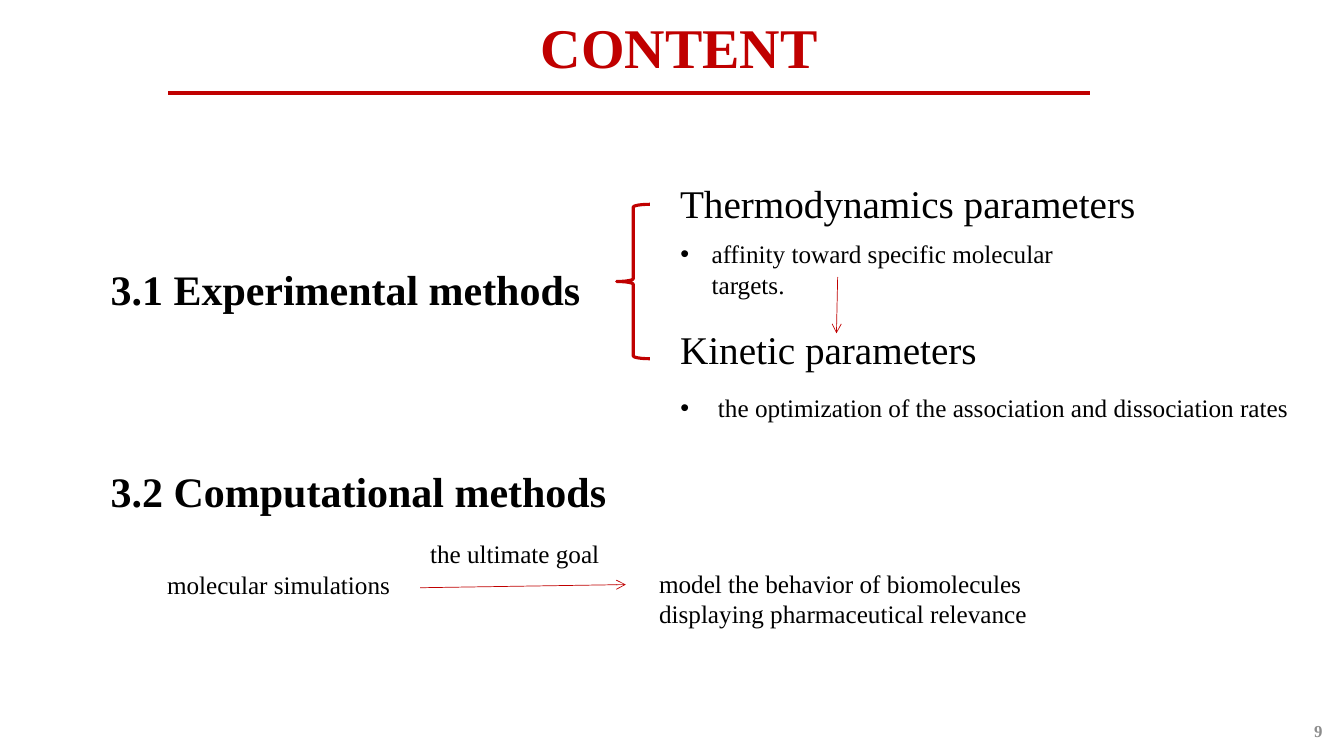
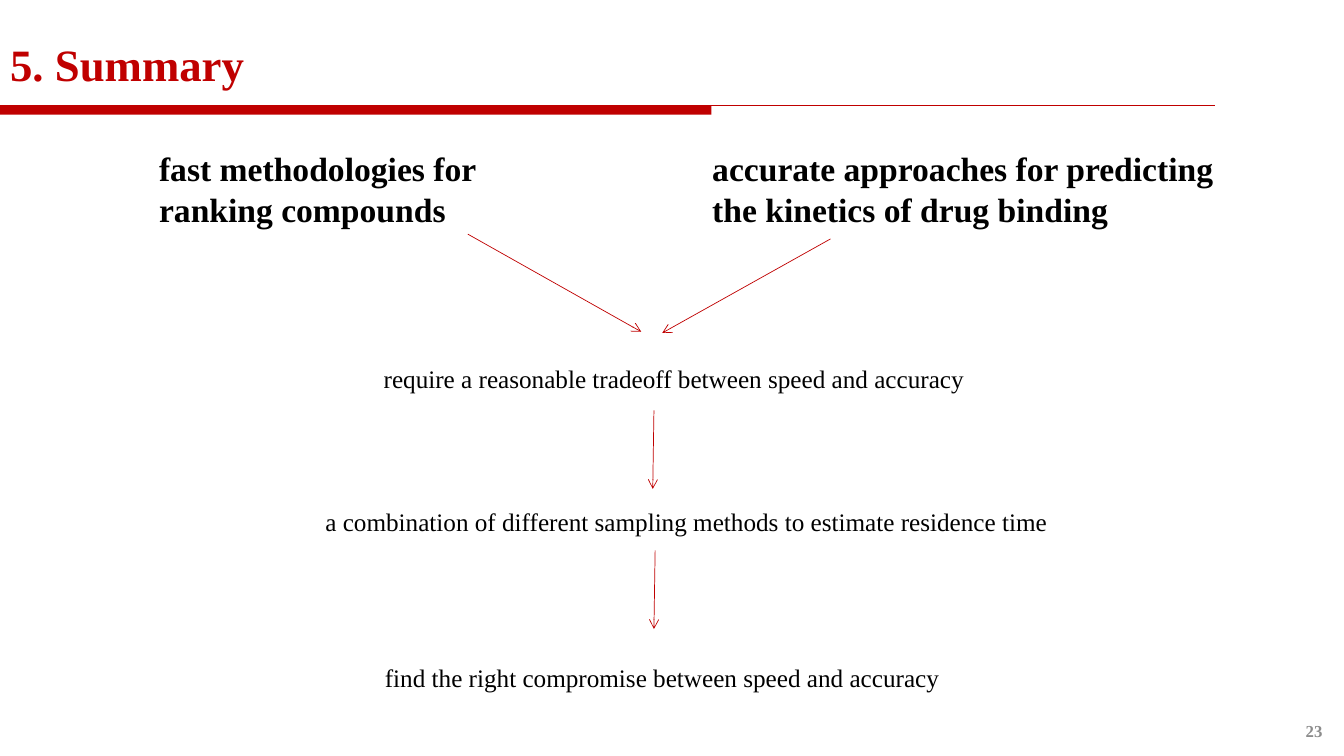
import lxml.etree
import pptx
import pptx.dml.color
import pptx.enum.shapes
import pptx.enum.text
import pptx.oxml.ns
import pptx.util

Cm = pptx.util.Cm
Pt = pptx.util.Pt
SHAPE = pptx.enum.shapes.MSO_SHAPE
ALIGN = pptx.enum.text.PP_ALIGN
ANCHOR = pptx.enum.text.MSO_ANCHOR

# Shared style
FONT = "Times New Roman"
RED, BLACK, GREY = "C00000", "000000", "8C8C8C"
BODY, HEADING = 18, 30
LINE_H = 1.02


def color(hex_code):
    return pptx.dml.color.RGBColor.from_string(hex_code)


def add_xml(parent, tag, **attrs):
    lxml.etree.SubElement(parent, pptx.oxml.ns.qn(tag), attrs)


def write(sp, lines, size, bold=False, hex_code=BLACK, align=ALIGN.LEFT,
          anchor=ANCHOR.TOP, hanging=None):
    """Fill a text box or placeholder, one paragraph for each line."""
    tf = sp.text_frame
    tf.word_wrap = True
    tf.auto_size = pptx.enum.text.MSO_AUTO_SIZE.NONE
    tf.vertical_anchor = anchor
    for i, line in enumerate(lines):
        p = tf.add_paragraph() if i else tf.paragraphs[0]
        if hanging:
            pPr = p._p.get_or_add_pPr()
            pPr.set("marL", str(int(Cm(hanging))))
            pPr.set("indent", str(-int(Cm(hanging))))
            add_xml(pPr, "a:buFont", typeface="Arial")
            add_xml(pPr, "a:buChar", char="•")
        p.alignment = align
        p.space_before = Pt(0)
        r = p.add_run()
        r.text = line
        r.font.name, r.font.size, r.font.bold = FONT, Pt(size), bold
        r.font.color.rgb = color(hex_code)


def add_text(s, x, y, w, h, lines, size=BODY, **style):
    sp = s.shapes.add_textbox(Cm(x), Cm(y), Cm(w), Cm(h))
    write(sp, lines, size, **style)


def fill_placeholder(sp, x, y, w, h, lines, size, **style):
    sp.left, sp.top, sp.width, sp.height = Cm(x), Cm(y), Cm(w), Cm(h)
    write(sp, lines, size, **style)


def add_line(s, x1, y1, x2, y2, width=0.5, arrow=True):
    cxn = s.shapes.add_connector(pptx.enum.shapes.MSO_CONNECTOR.STRAIGHT,
                                 Cm(x1), Cm(y1), Cm(x2), Cm(y2))
    cxn.line.color.rgb = color(RED)
    cxn.line.width = Pt(width)
    if arrow:
        add_xml(cxn.line._get_or_add_ln(), "a:tailEnd", type="arrow")
    add_xml(cxn._element.spPr, "a:effectLst")


def add_title(s, x, y, w, h, text, size, align=ALIGN.LEFT):
    fill_placeholder(s.shapes.title, x, y, w, h, [text], size,
                     bold=True, hex_code=RED, align=align)


def add_page_number(s, number):
    add_text(s, 25.96, 17.91, 7.62, LINE_H, [str(number)], 12, bold=True,
             hex_code=GREY, align=ALIGN.RIGHT, anchor=ANCHOR.MIDDLE)


def add_heading(s, x, y, w, text):
    add_text(s, x, y, w, 1.5, [text], HEADING, bold=True)


# Content slide
def experimental_methods(s, x, y):
    add_heading(s, x, y + 2.13, 13, "3.1 Experimental methods")
    brace = s.shapes.add_shape(SHAPE.LEFT_BRACE, Cm(x + 13), Cm(y + 0.76),
                               Cm(0.84), Cm(3.89))
    brace.shadow.inherit = False
    brace.fill.background()
    brace.line.color.rgb = color(RED)
    brace.line.width = Pt(2.25)

    # name, its top, list text, list top, list width, hanging indent
    parameters = [
        ("Thermodynamics parameters", 0,
         "affinity toward specific molecular targets.", 1.5, 11.79, 0.79),
        ("Kinetic parameters", 3.68,
         "the optimization of the association and dissociation rates",
         5.38, 16.08, 0.95),
    ]
    px = x + 14.35
    for i, (name, top, item, item_top, w, hanging) in enumerate(parameters, 1):
        add_text(s, px, y + top, 12.57, 1.45, [name], 28)
        fill_placeholder(s.placeholders[i], px, y + item_top, w, LINE_H,
                         [item], BODY, hanging=hanging)
    add_line(s, x + 18.57, y + 2.59, x + 18.54, y + 4.01)


def computational_methods(s, x, y):
    add_heading(s, x, y, 14.07, "3.2 Computational methods")
    add_text(s, x + 1.42, y + 2.62, 6.6, LINE_H, ["molecular simulations"])
    add_text(s, x + 8.05, y + 1.83, 5.2, LINE_H, ["the ultimate goal"])
    add_line(s, x + 8.05, y + 3.2, x + 13.23, y + 3.12)
    add_text(s, x + 13.82, y + 2.59, 12.67, 1.8,
             ["model the behavior of biomolecules",
              "displaying pharmaceutical relevance"])


def content_slide(prs):
    s = prs.slides.add_slide(prs.slide_layouts[3])
    add_title(s, 7.54, 0.18, 19.15, 1.96, "CONTENT", 40, ALIGN.CENTER)
    add_line(s, 4.24, 2.34, 27.46, 2.34, width=3, arrow=False)
    experimental_methods(s, 2.54, 4.39)
    computational_methods(s, 2.54, 11.61)
    add_page_number(s, 9)


# Summary slide
def title_band(s, x, y, w):
    bar = s.shapes.add_shape(SHAPE.RECTANGLE, Cm(x), Cm(y), Cm(17.93), Cm(0.22))
    bar.shadow.inherit = False
    bar.fill.solid()
    bar.fill.fore_color.rgb = color(RED)
    bar.line.fill.background()
    add_line(s, x, y, x + w, y, width=0.75, arrow=False)


def competing_goals(s, x, y):
    add_text(s, x, y, 9.09, 2.31,
             ["fast methodologies for ranking compounds"], 24, bold=True)
    add_text(s, x + 13.94, y, 13.36, 2.31,
             ["accurate approaches for predicting the kinetics of drug binding"],
             24, bold=True)
    add_line(s, x + 8.03, y + 2.29, x + 12.4, y + 4.75)
    add_line(s, x + 17.17, y + 2.41, x + 12.93, y + 4.78)


def tradeoff_steps(s, x, y):
    steps = [
        ("require a reasonable tradeoff between speed and accuracy", 1.47, 0),
        ("a combination of different sampling methods to estimate residence time",
         0, 3.61),
        ("find the right compromise between speed and accuracy", 1.5, 7.54),
    ]
    for text, dx, dy in steps:
        add_text(s, x + dx, y + dy, 19.71, LINE_H, [text])
    for dx, dy in [(8.53, 1.32), (8.56, 4.85)]:
        add_line(s, x + dx, y + dy, x + dx - 0.03, y + dy + 1.98)


def summary_slide(prs):
    s = prs.slides.add_slide(prs.slide_layouts[5])
    add_title(s, 0, 0.81, 15.27, 1.5, "5. Summary", 32)
    title_band(s, 0, 2.67, 30.63)
    competing_goals(s, 3.76, 3.61)
    tradeoff_steps(s, 7.95, 9.02)
    add_page_number(s, 23)


def main():
    prs = pptx.Presentation()
    prs.slide_width, prs.slide_height = Cm(33.87), Cm(19.05)
    content_slide(prs)
    summary_slide(prs)
    prs.save("out.pptx")


if __name__ == "__main__":
    main()
